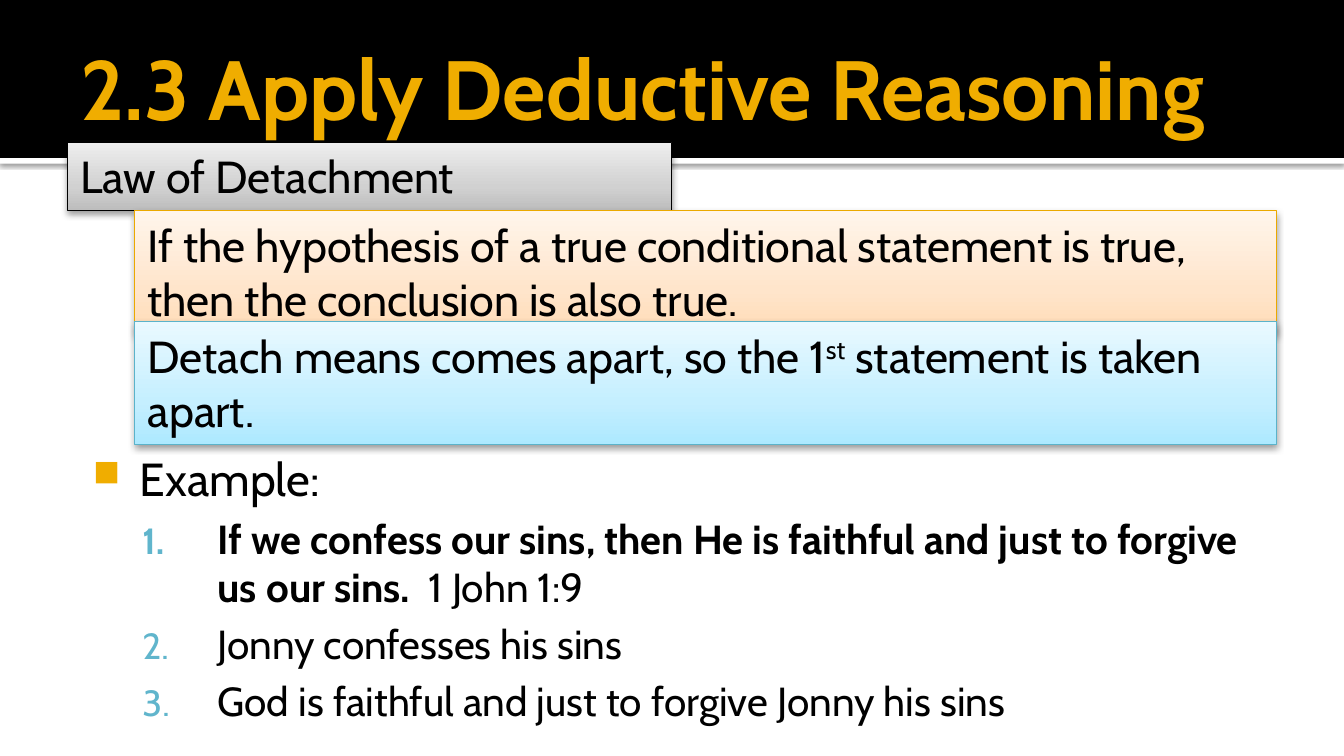
"""Build a slide on the Law of Detachment with three panels and a worked example."""
from dataclasses import dataclass

from lxml.etree import SubElement
from pptx import Presentation
from pptx.dml.color import RGBColor
from pptx.enum.shapes import MSO_SHAPE as Shape
from pptx.enum.text import MSO_ANCHOR as Anchor, MSO_AUTO_SIZE as AutoSize, PP_ALIGN as Align
from pptx.oxml.ns import qn
from pptx.util import Pt

FONT = "Cabin"
BLACK, WHITE, GOLD, TEAL = "000000", "FFFFFF", "F0AD00", "60B5CC"


@dataclass(frozen=True)
class Frame:
    left: float
    top: float
    width: float
    height: float

    def points(self) -> list:
        return [Pt(n) for n in (self.left, self.top, self.width, self.height)]


@dataclass(frozen=True)
class Span:
    text: str
    bold: bool = False
    superscript: bool = False


@dataclass(frozen=True)
class Shadow:
    opacity: int
    blur: float
    distance: float


@dataclass(frozen=True)
class Panel:
    frame: Frame
    stops: tuple[str, str, str]
    outline: str
    spans: tuple[Span, ...]


@dataclass(frozen=True)
class Entry:
    spans: tuple[Span, ...]
    size: float = 21.7
    indent: float = 76.3
    hanging: float = 40.3
    level: int = 1
    before: float = 4.3
    marker: tuple[str, str, str] = ("a:buAutoNum", "type", "arabicPeriod")
    marker_color: str = TEAL
    marker_percent: int = 90


PANEL_SHADOW = Shadow(38, 3.5, 2)
PANELS = (
    Panel(Frame(36, 76.3, 324, 36.4), ("BDBDBD", "D1D1D1", "EEEEEE"), BLACK,
          (Span("Law of Detachment"),)),
    Panel(Frame(72, 113, 612, 65.5), ("FFDBB5", "FFE5CB", "FFF5EB"), "EBA900",
          (Span("If the hypothesis of a true conditional statement is true, "
                "then the conclusion is also true."),)),
    Panel(Frame(72, 172.5, 612, 65.5), ("ADE9FF", "C5EFFF", "E9F9FF"), "5BB3CA",
          (Span("Detach means comes apart, so the 1"), Span("st", superscript=True),
           Span(" statement is taken apart."))),
)
ENTRIES = (
    Entry((Span("Example:"),), 24.8, 34.6, 25.2, 0, 0, ("a:buChar", "char", "■"), GOLD, 80),
    Entry((Span("If we confess our sins, then He is faithful and just to forgive us our sins.  ",
                bold=True), Span("1 John 1:9"))),
    Entry((Span("Jonny confesses his sins"),)),
    Entry((Span("God is faithful and just to forgive Jonny his sins"),)),
)


def color(value: str) -> RGBColor:
    return RGBColor.from_string(value)


def add_child(parent, tag: str, **attributes):
    return SubElement(parent, qn(tag), {name: str(value) for name, value in attributes.items()})


def add_rectangle(page, frame: Frame, shadow: Shadow | None = None):
    box = page.shapes.add_shape(Shape.RECTANGLE, *frame.points())
    box.shadow.inherit = False
    if shadow:
        effects = box._element.spPr.find(qn("a:effectLst"))
        outer = add_child(effects, "a:outerShdw", blurRad=Pt(shadow.blur),
                          dist=Pt(shadow.distance), dir=90 * 60000, rotWithShape=0)
        tint = add_child(outer, "a:srgbClr", val=BLACK)
        add_child(tint, "a:alpha", val=shadow.opacity * 1000)
    return box


def add_band(page, frame: Frame, fill: str, shadow: Shadow | None = None) -> None:
    box = add_rectangle(page, frame, shadow)
    box.fill.solid()
    box.fill.fore_color.rgb = color(fill)
    box.line.fill.background()


def fill_gradient(box, stops: tuple[str, str, str]) -> None:
    box.fill.gradient()
    box.fill.gradient_angle = 90
    stop_list = box._element.spPr.find(qn("a:gradFill")).find(qn("a:gsLst"))
    for stop in list(stop_list):
        stop_list.remove(stop)
    for position, value in zip((0, 35, 100), stops):
        add_child(add_child(stop_list, "a:gs", pos=position * 1000), "a:srgbClr", val=value)


def write_spans(para, spans: tuple[Span, ...], size: float, ink: str = BLACK) -> None:
    para.alignment = Align.LEFT
    para.font.name, para.font.size = FONT, Pt(size)
    para.font.color.rgb = color(ink)
    for span in spans:
        run = para.add_run()
        run.text = span.text
        run.font.name, run.font.size = FONT, Pt(size)
        run.font.color.rgb = color(ink)
        run.font.bold = span.bold
        if span.superscript:
            run.font._element.set("baseline", "30000")


def add_panel(page, panel: Panel) -> None:
    box = add_rectangle(page, panel.frame, PANEL_SHADOW)
    fill_gradient(box, panel.stops)
    box.line.color.rgb = color(panel.outline)
    box.line.width = Pt(0.5)
    frame = box.text_frame
    frame.word_wrap = True
    frame.auto_size = AutoSize.SHAPE_TO_FIT_TEXT
    frame.vertical_anchor = Anchor.TOP
    write_spans(frame.paragraphs[0], panel.spans, 24)


def add_text(page, frame: Frame, margins: tuple[float, ...], anchor: Anchor):
    text = page.shapes.add_textbox(*frame.points()).text_frame
    text.word_wrap = True
    text.vertical_anchor = anchor
    text.margin_left, text.margin_top, text.margin_right, text.margin_bottom = map(Pt, margins)
    return text


def write_entry(para, entry: Entry) -> None:
    para.level = entry.level
    para.space_before = Pt(entry.before)
    properties = para._p.get_or_add_pPr()
    properties.set("marL", str(Pt(entry.indent)))
    properties.set("indent", str(-Pt(entry.hanging)))
    add_child(add_child(properties, "a:buClr"), "a:srgbClr", val=entry.marker_color)
    add_child(properties, "a:buSzPct", val=entry.marker_percent * 1000)
    tag, name, value = entry.marker
    add_child(properties, tag, **{name: value})
    write_spans(para, entry.spans, entry.size)


def main() -> None:
    deck = Presentation()
    deck.slide_width, deck.slide_height = Pt(720), Pt(405)
    page = deck.slides.add_slide(deck.slide_layouts[6])
    page.background.fill.solid()
    page.background.fill.fore_color.rgb = color(WHITE)

    add_band(page, Frame(0, 84.7, 720, 3), WHITE, Shadow(60, 2.5, 0.8))
    add_band(page, Frame(0, 0, 720, 84.7), BLACK)
    title = add_text(page, Frame(36, 9.4, 648, 74.2), (7.2, 3.6, 3.6, 3.6), Anchor.MIDDLE)
    write_spans(title.paragraphs[0], (Span("2.3 Apply Deductive Reasoning", bold=True),), 45, GOLD)

    body = add_text(page, Frame(36, 234, 648, 144), (4.3, 7.2, 7.2, 3.6), Anchor.TOP)
    for index, entry in enumerate(ENTRIES):
        write_entry(body.add_paragraph() if index else body.paragraphs[0], entry)
    for panel in PANELS:
        add_panel(page, panel)
    deck.save("out.pptx")


if __name__ == "__main__":
    main()
